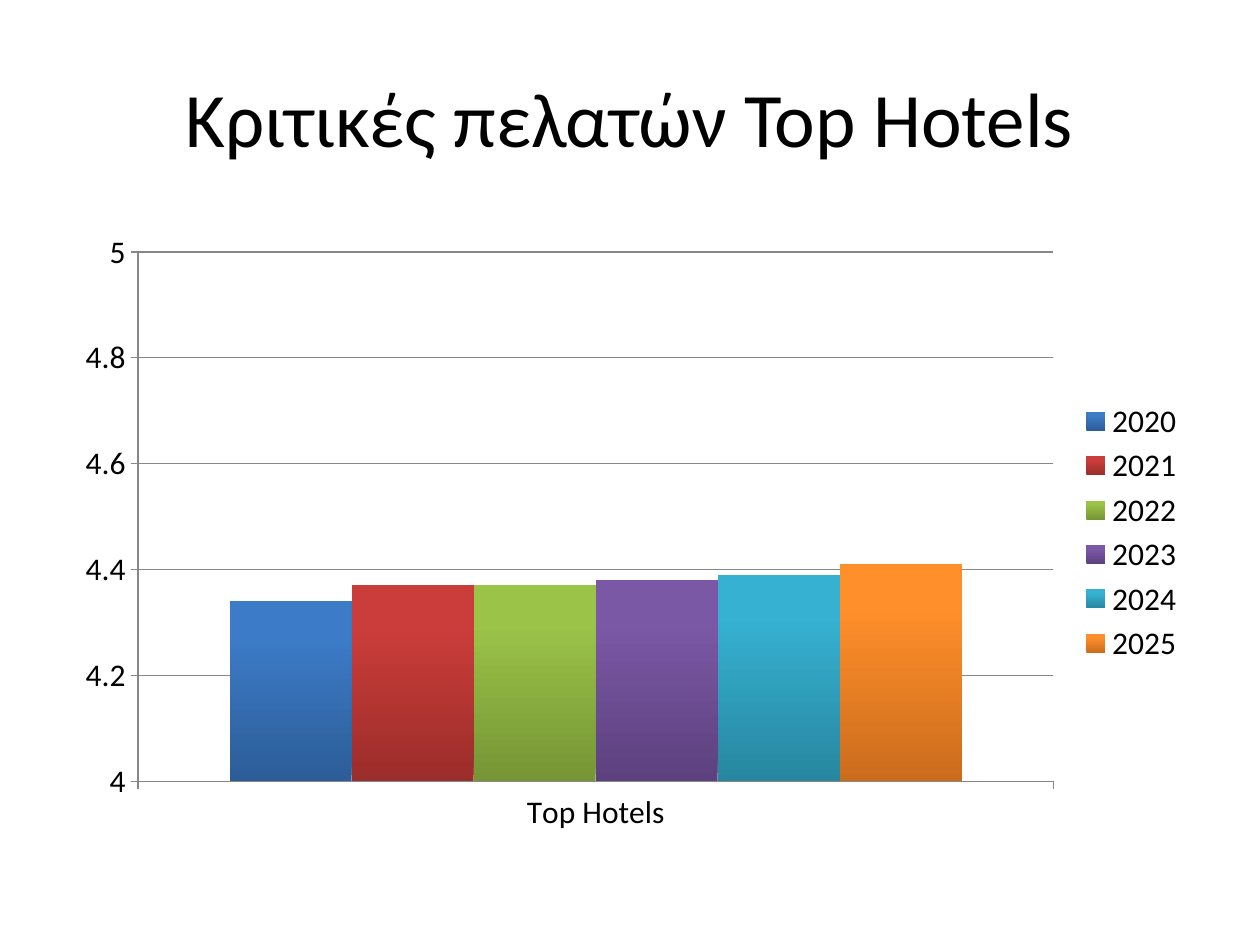
import pptx
import pptx.chart.data
import pptx.dml.color
import pptx.enum.chart
import pptx.enum.text
import pptx.util

Inches, Pt = pptx.util.Inches, pptx.util.Pt
RGB = pptx.dml.color.RGBColor.from_string

# Content
TITLE = "Κριτικές πελατών Top Hotels"
CATEGORIES = ["Top Hotels"]
# year, rating, dark foot and light top of the column
RATINGS = [
    ("2020", 4.34, "2C5D98", "3C7BC7"),
    ("2021", 4.37, "9B2D2A", "CB3D3A"),
    ("2022", 4.37, "769535", "9BC348"),
    ("2023", 4.38, "5D417E", "7B58A6"),
    ("2024", 4.39, "2787A0", "36B1D2"),
    ("2025", 4.41, "CB6C1D", "FF8F2A"),
]
THEME = {"font": "Calibri", "text": "000000", "line": "878787",
         "title_size": 44, "chart_size": 18, "line_width": 0.75}


def style_font(font, size):
    font.name = THEME["font"]
    font.size = Pt(size)
    font.bold = False
    font.color.rgb = RGB(THEME["text"])


def style_line(line):
    line.color.rgb = RGB(THEME["line"])
    line.width = Pt(THEME["line_width"])


presentation = pptx.Presentation()
presentation.slide_width, presentation.slide_height = Inches(10), Inches(7.5)
slide = presentation.slides.add_slide(presentation.slide_layouts[5])

# Title
heading = slide.shapes.title
heading.left, heading.top = Inches(0.5), Inches(0.3)
heading.width, heading.height = Inches(9), Inches(1.25)
heading.text_frame.vertical_anchor = pptx.enum.text.MSO_ANCHOR.MIDDLE
heading_line = heading.text_frame.paragraphs[0]
heading_line.alignment = pptx.enum.text.PP_ALIGN.CENTER
heading_run = heading_line.add_run()
heading_run.text = TITLE
style_font(heading_run.font, THEME["title_size"])

# Ratings chart
ratings_data = pptx.chart.data.CategoryChartData()
ratings_data.categories = CATEGORIES
for year, rating, *_ in RATINGS:
    ratings_data.add_series(year, [rating])
ratings = slide.shapes.add_chart(
    pptx.enum.chart.XL_CHART_TYPE.COLUMN_CLUSTERED,
    Inches(0.5), Inches(1.75), Inches(9), Inches(4.95), ratings_data).chart
ratings.has_title = False
style_font(ratings.font, THEME["chart_size"])

ratings.has_legend = True
ratings.legend.position = pptx.enum.chart.XL_LEGEND_POSITION.RIGHT
ratings.legend.include_in_layout = False

# Columns, shaded from foot to top
columns = ratings.plots[0]
columns.gap_width = 150
columns.overlap = 0
columns.vary_by_categories = False
for column, (_, _, foot, top) in zip(columns.series, RATINGS):
    column.invert_if_negative = False
    fill = column.format.fill
    fill.gradient()
    fill.gradient_angle = 90
    for stop, position, color in zip(fill.gradient_stops, (0, 0.8), (foot, top)):
        stop.position = position
        stop.color.rgb = RGB(color)

# Axes
for axis in (ratings.category_axis, ratings.value_axis):
    axis.major_tick_mark = pptx.enum.chart.XL_TICK_MARK.OUTSIDE
    axis.minor_tick_mark = pptx.enum.chart.XL_TICK_MARK.NONE
    style_line(axis.format.line)
score_axis = ratings.value_axis
score_axis.minimum_scale, score_axis.maximum_scale = 4, 5
score_axis.major_unit = 0.2
score_axis.tick_labels.number_format = "General"
score_axis.tick_labels.number_format_is_linked = False
score_axis.has_major_gridlines = True
style_line(score_axis.major_gridlines.format.line)

presentation.save("out.pptx")
